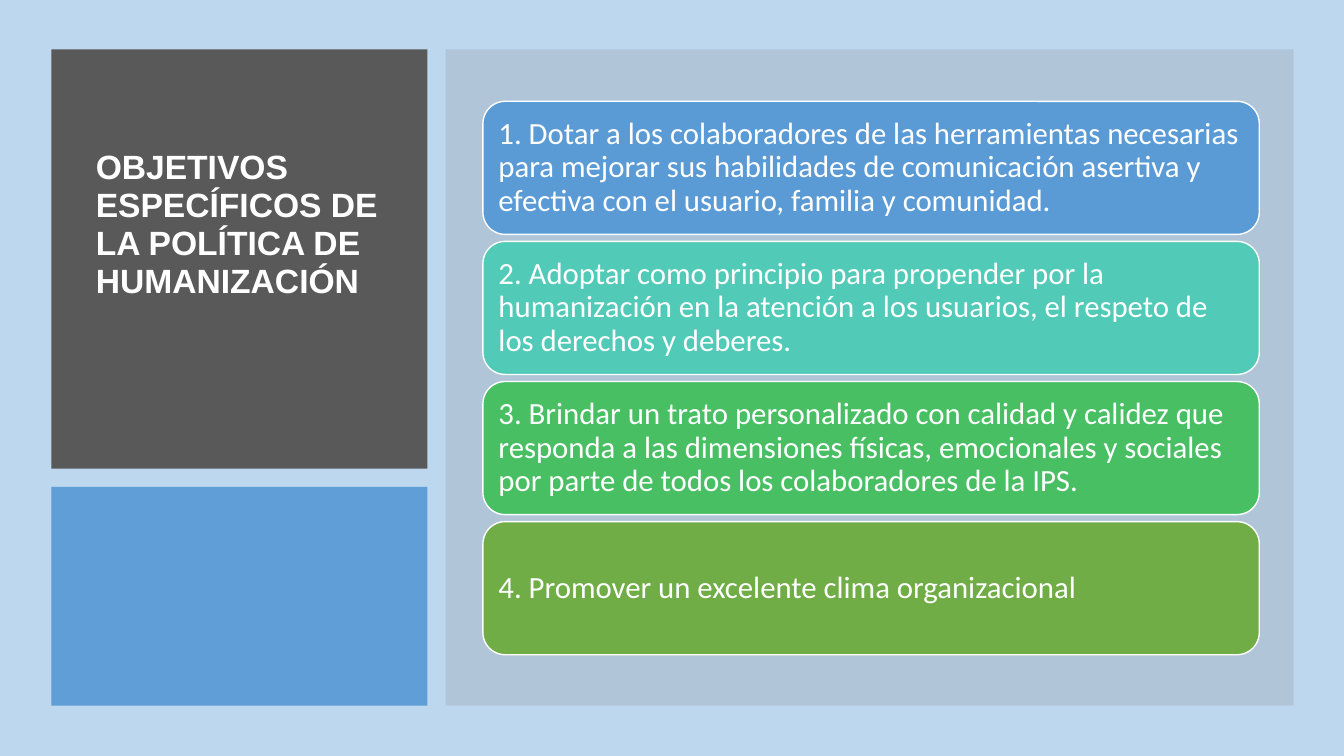
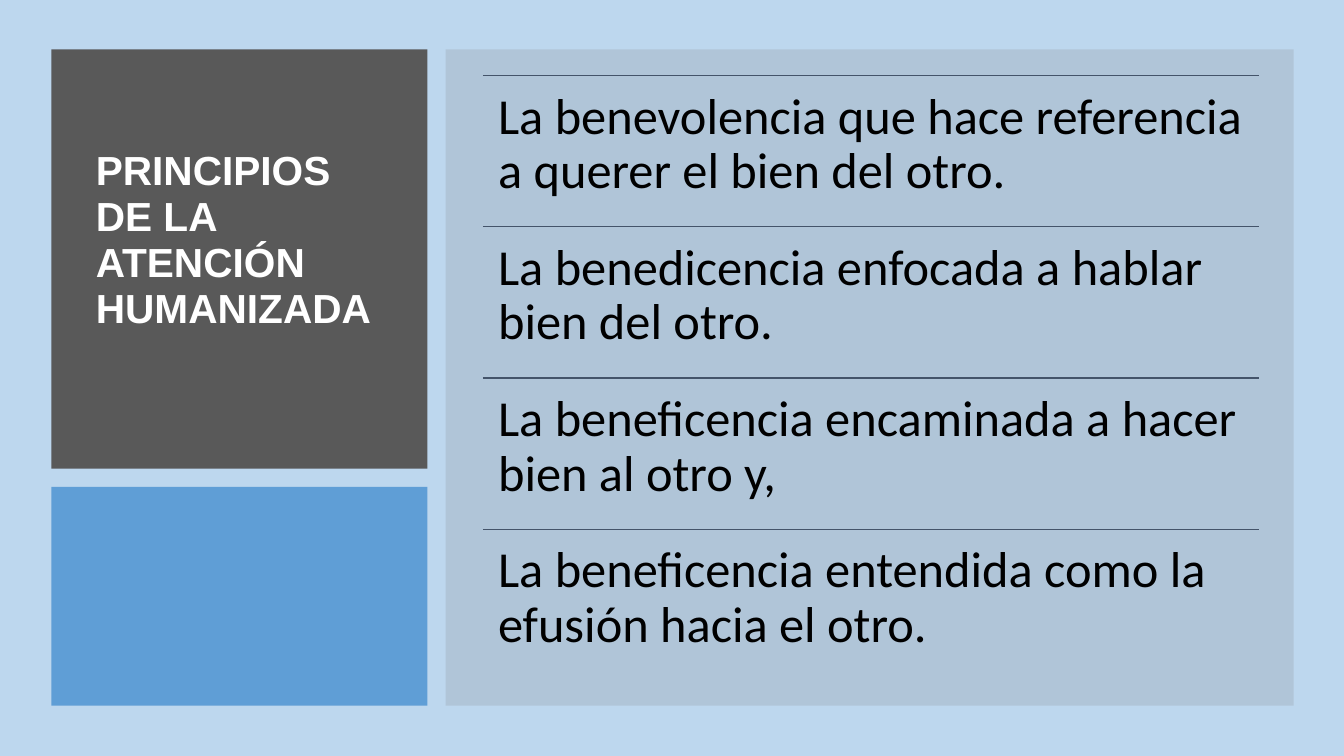
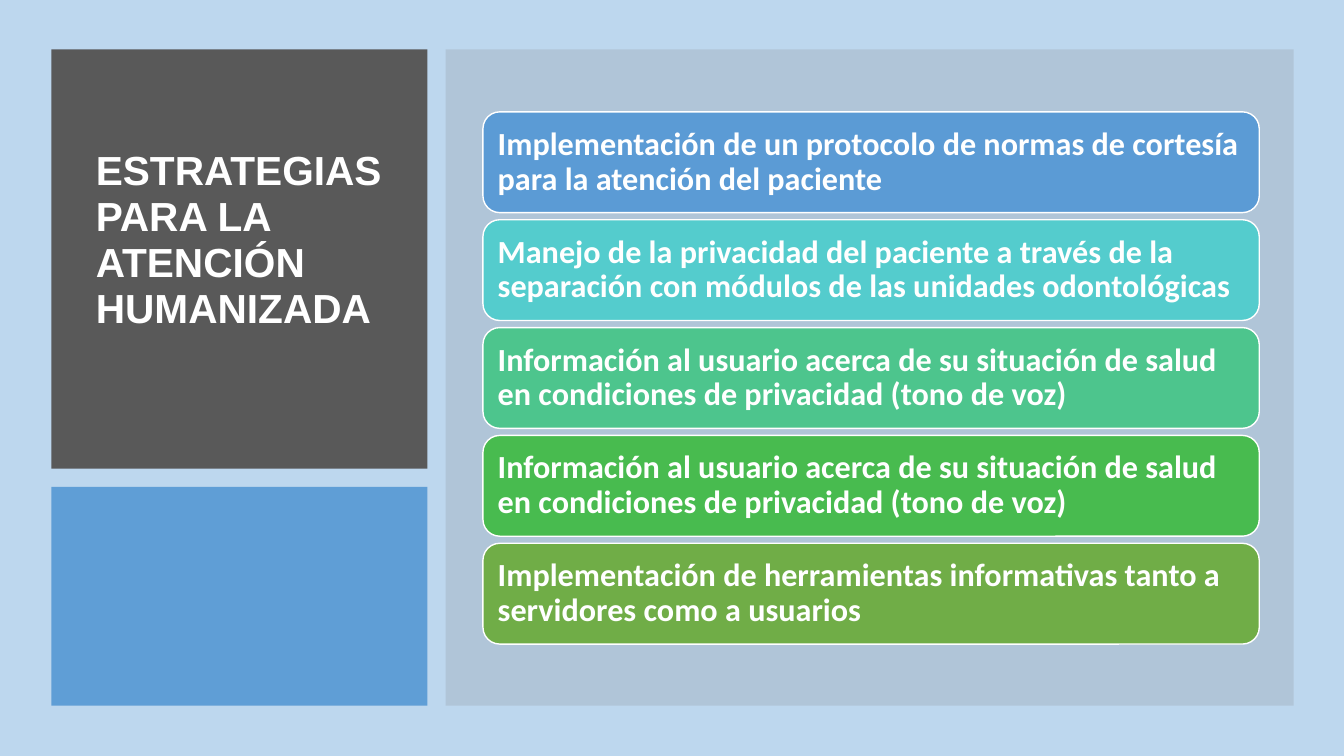
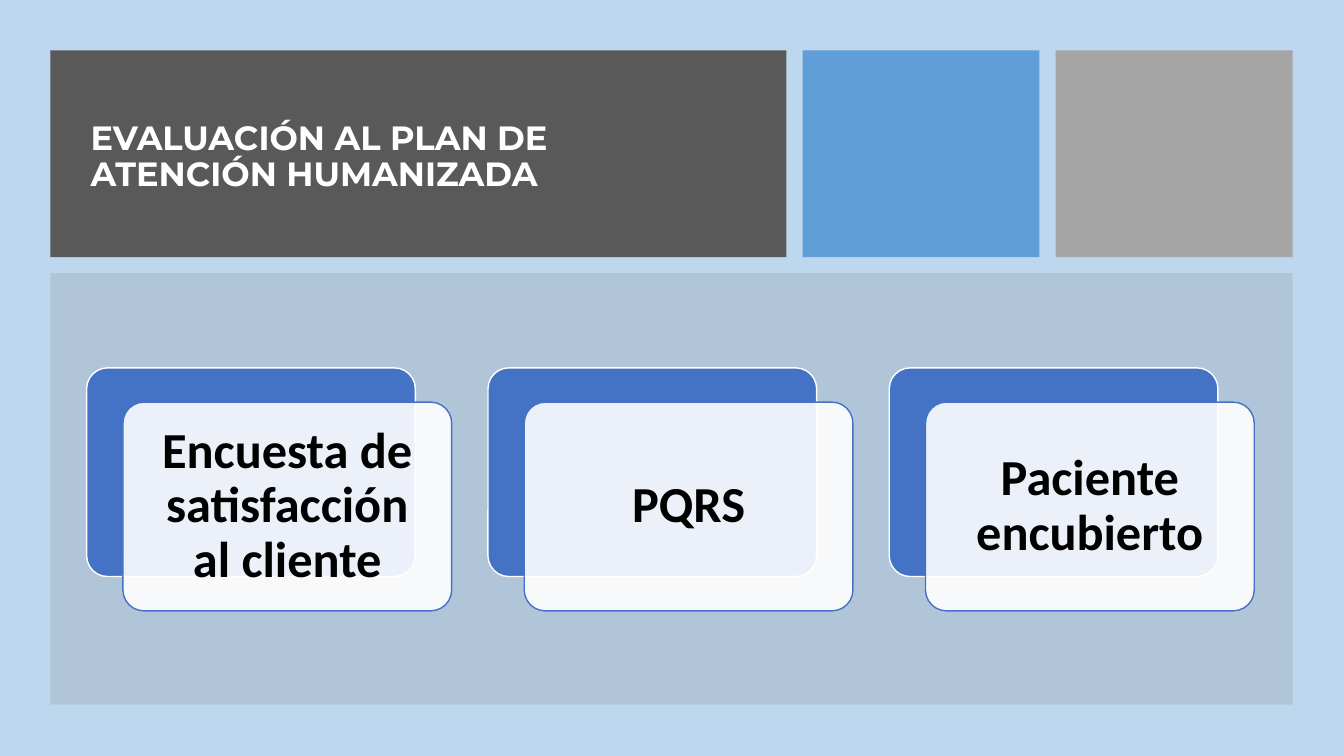
from lxml.etree import SubElement
from pptx import Presentation
from pptx.dml.color import RGBColor
from pptx.enum.shapes import MSO_CONNECTOR, MSO_SHAPE
from pptx.enum.text import MSO_ANCHOR, MSO_AUTO_SIZE, PP_ALIGN
from pptx.oxml.ns import qn
from pptx.util import Inches, Pt

# Content
OBJECTIVES = [
    ("5B9BD5", "1. Dotar a los colaboradores de las herramientas necesarias para mejorar sus "
               "habilidades de comunicación asertiva y efectiva con el usuario, familia y comunidad."),
    ("52CAB8", "2. Adoptar como principio para propender por la humanización en la atención a "
               "los usuarios, el respeto de los derechos y deberes."),
    ("49BF64", "3. Brindar un trato personalizado con calidad y calidez que responda a las "
               "dimensiones físicas, emocionales y sociales por parte de todos los colaboradores de la IPS."),
    ("70AD47", "4. Promover un excelente clima organizacional"),
]
PRINCIPLES = [
    "La benevolencia que hace referencia a querer el bien del otro.",
    "La benedicencia enfocada a hablar bien del otro.",
    "La beneficencia encaminada a hacer bien al otro y,",
    "La beneficencia entendida como la efusión hacia el otro.",
]
PRIVACY = ("Información al usuario acerca de su situación de salud en condiciones de "
           "privacidad (tono de voz)")
STRATEGIES = [
    ("5B9BD5", "Implementación de un protocolo de normas de cortesía para la atención del paciente"),
    ("54CCCD", "Manejo de la privacidad del paciente a través de la separación con módulos de "
               "las unidades odontológicas"),
    ("4DC58D", PRIVACY),
    ("48BB4F", PRIVACY),
    ("70AD47", "Implementación de herramientas informativas tanto a servidores como a usuarios"),
]
EVALUATION = ["Encuesta de satisfacción al cliente", "PQRS", "Paciente encubierto"]

# Shared style
SKY, DARK, BLUE, GREY, VEIL = "BDD7EE", "595959", "5B9BD5", "A5A5A5", "808080"
ROYAL, SLATE, WHITE, BLACK = "4472C4", "44546A", "FFFFFF", "000000"
WIDTH, HEIGHT = 13.33, 7.5
LIST_LEFT, LIST_WIDTH = 4.79, 7.7

deck = Presentation()
deck.slide_width, deck.slide_height = Inches(WIDTH), Inches(HEIGHT)
TITLE_ONLY = deck.slide_layouts[5]


def colour(hex_code):
    return RGBColor.from_string(hex_code)


background = deck.slide_master.background.fill
background.solid()
background.fore_color.rgb = colour(SKY)


def write(shape, text, size, color=WHITE, font="Calibri", bold=False, align=PP_ALIGN.LEFT,
          anchor=MSO_ANCHOR.MIDDLE, inset=0.1, inset_y=None, spacing=0.9):
    frame = shape.text_frame
    frame.word_wrap = True
    frame.auto_size = MSO_AUTO_SIZE.NONE
    frame.vertical_anchor = anchor
    frame.margin_left = frame.margin_right = Inches(inset)
    frame.margin_top = frame.margin_bottom = Inches(inset if inset_y is None else inset_y)
    para = frame.paragraphs[0]
    para.alignment, para.line_spacing = align, spacing
    span = para.add_run()
    span.text = text
    span.font.name, span.font.size, span.font.bold = font, Pt(size), bold
    span.font.color.rgb = colour(color)


def add_box(page, place, fill, kind=MSO_SHAPE.RECTANGLE, alpha=100, line=None):
    box = page.shapes.add_shape(kind, *map(Inches, place))
    box.shadow.inherit = False
    box.fill.solid()
    box.fill.fore_color.rgb = colour(fill)
    if alpha < 100:
        tint = box.fill._xPr.find(qn("a:solidFill"))[0]
        SubElement(tint, qn("a:alpha")).set("val", str(alpha * 1000))
    if line:
        box.line.color.rgb = colour(line)
        box.line.width = Pt(1)
    else:
        box.line.fill.background()
    return box


def add_rule(page, left, top, width):
    rule = page.shapes.add_connector(
        MSO_CONNECTOR.STRAIGHT, *map(Inches, (left, top, left + width, top)))
    rule.line.color.rgb = colour(SLATE)
    rule.line.width = Pt(1)
    SubElement(rule._element.spPr, qn("a:effectLst"))


def new_page(panels, title, place, size, font="Arial", spacing=0.94):
    page = deck.slides.add_slide(TITLE_ONLY)
    for panel_place, fill, alpha in panels:
        add_box(page, panel_place, fill, alpha=alpha)
    heading = page.shapes.title
    heading.left, heading.top, heading.width, heading.height = map(Inches, place)
    write(heading, title, size, font=font, bold=True, anchor=MSO_ANCHOR.TOP,
          inset_y=0.05, spacing=spacing)
    # Bring the title in front of the panels
    page.shapes._spTree.append(heading._element)
    return page


def side_page(title, size):
    panels = [((0.51, 0.49, 3.73, 4.16), DARK, 100),
              ((0.51, 4.83, 3.73, 2.17), BLUE, 95),
              ((4.42, 0.49, 8.41, 6.51), VEIL, 20)]
    return new_page(panels, title, (0.85, 1.43, 3.11, 2.9), size)


def card_list(page, cards, height, gap=0.07, **style):
    top = (HEIGHT - len(cards) * height - (len(cards) - 1) * gap) / 2
    for row, (fill, text) in enumerate(cards):
        place = (LIST_LEFT, top + row * (height + gap), LIST_WIDTH, height)
        card = add_box(page, place, fill, MSO_SHAPE.ROUNDED_RECTANGLE, line=WHITE)
        write(card, text, **style)


# Objectives
page = side_page("OBJETIVOS ESPECÍFICOS DE LA POLÍTICA DE HUMANIZACIÓN", 24)
card_list(page, OBJECTIVES, 1.32, size=22, inset=0.09)

# Principles
page = side_page("PRINCIPIOS DE LA ATENCIÓN HUMANIZADA", 29)
row_height = 1.5
for row, principle in enumerate(PRINCIPLES):
    top = 0.75 + row * row_height
    add_rule(page, LIST_LEFT, top, LIST_WIDTH)
    box = page.shapes.add_textbox(*map(Inches, (LIST_LEFT, top, LIST_WIDTH, row_height)))
    write(box, principle, 36, color=BLACK, anchor=MSO_ANCHOR.TOP, inset=0.15)

# Strategies
page = side_page("ESTRATEGIAS PARA LA ATENCIÓN HUMANIZADA", 29)
card_list(page, STRATEGIES, 1, size=23, bold=True)

# Evaluation
top_panels = [((0.5, 0.5, 7.3, 2.05), DARK, 100),
              ((7.96, 0.5, 2.35, 2.05), BLUE, 95),
              ((10.47, 0.5, 2.35, 2.05), GREY, 100),
              ((0.5, 2.71, 12.32, 4.28), VEIL, 20)]
page = new_page(top_panels, "EVALUACIÓN AL PLAN DE ATENCIÓN HUMANIZADA",
                (0.8, 1.15, 5.5, 1.2), 24, font="Montserrat", spacing=0.9)
card_width, card_height, shift_x, shift_y = 3.26, 2.07, 0.36, 0.34
for column, text in enumerate(EVALUATION):
    left, top = 0.86 + column * (card_width + 2 * shift_x), 3.65
    back = add_box(page, (left, top, card_width, card_height), ROYAL,
                   MSO_SHAPE.ROUNDED_RECTANGLE, line=WHITE)
    front = add_box(page, (left + shift_x, top + shift_y, card_width, card_height), WHITE,
                    MSO_SHAPE.ROUNDED_RECTANGLE, alpha=90, line=ROYAL)
    back.adjustments[0] = front.adjustments[0] = 0.1
    write(front, text, 36, color=BLACK, bold=True, align=PP_ALIGN.CENTER, inset=0.15)

deck.save("out.pptx")
